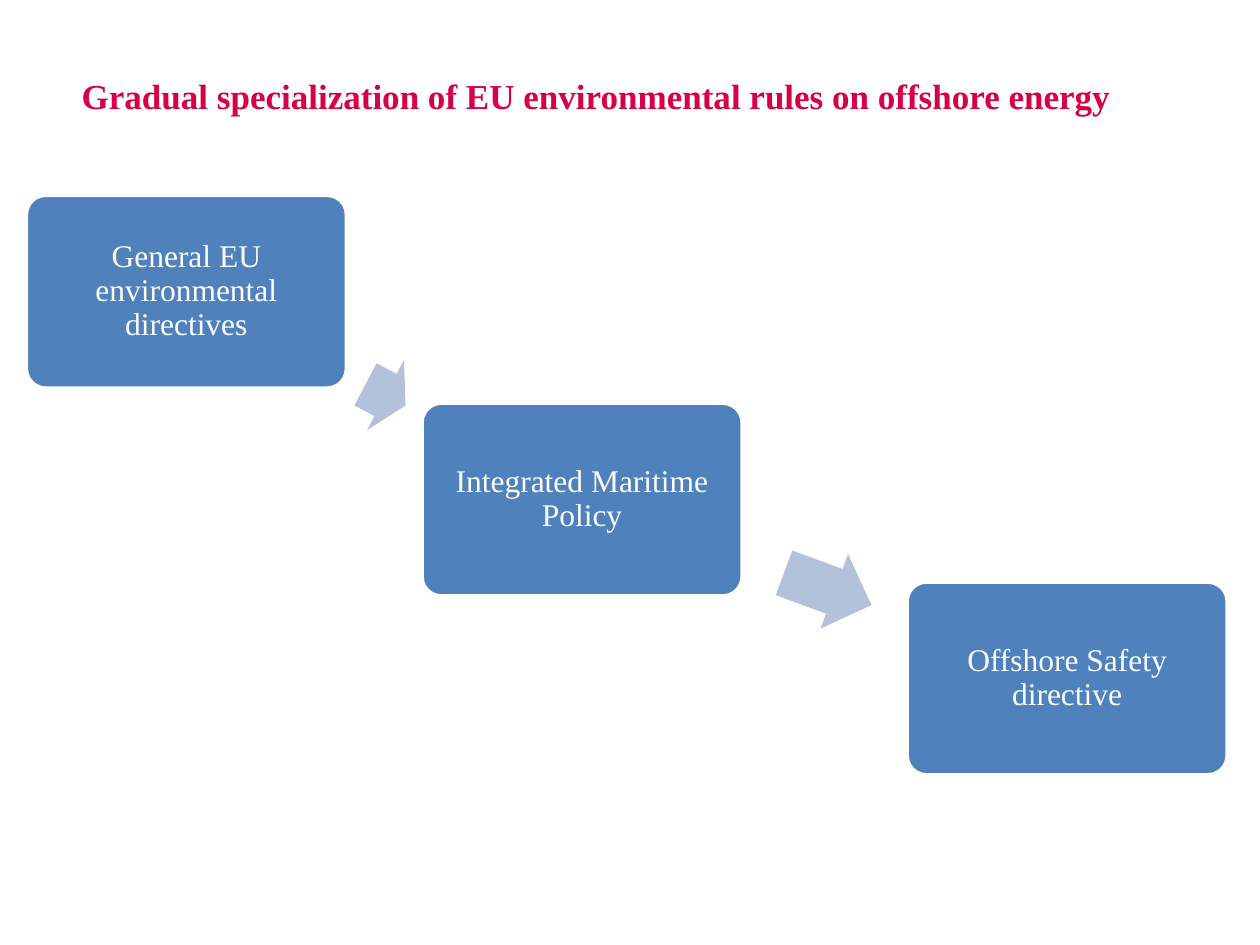
"""Build a slide of three descending steps from general to specialised EU rules."""
import pptx
import pptx.dml.color
import pptx.enum.shapes
import pptx.enum.text
import pptx.util

HEADING = "Gradual specialization of EU environmental rules on offshore energy"
STEPS = [
    {"label": "General EU environmental directives", "left": 0.021, "top": 0.2067},
    {"label": "Integrated Maritime Policy", "left": 0.335, "top": 0.4267},
    {"label": "Offshore Safety directive", "left": 0.72, "top": 0.616},
]
TRANSITIONS = [
    {"left": 0.288, "top": 0.376, "width": 0.036, "angle": 27.8},
    {"left": 0.62, "top": 0.5813, "width": 0.074, "angle": 20.2},
]
STEP_SIZE = (0.254, 0.204)
TRANSITION_HEIGHT = 0.084
HEADING_AREA = (0.055, 0.0173, 0.9, 0.1667)

THEME = {
    "font": "Times New Roman",
    "heading": "D70044",
    "step": "4F81BD",
    "transition": "B3C1DB",
    "light": "FFFFFF",
    "heading_size": 20,
    "step_size": 18,
    "outline": 2,
}

SHAPES = pptx.enum.shapes.MSO_SHAPE
ALIGN = pptx.enum.text.PP_ALIGN


def colour(key):
    return pptx.dml.color.RGBColor.from_string(THEME[key])


def area(left, top, width, height):
    return [
        int(share * side)
        for share, side in zip(
            (left, top, width, height),
            (deck.slide_width, deck.slide_height) * 2,
        )
    ]


def write(holder, text, *, size, color, align, bold=False, inset=(0.1, 0.05), spacing=1.0):
    frame = holder.text_frame
    frame.word_wrap = True
    frame.vertical_anchor = pptx.enum.text.MSO_ANCHOR.MIDDLE
    frame.margin_left = frame.margin_right = pptx.util.Inches(inset[0])
    frame.margin_top = frame.margin_bottom = pptx.util.Inches(inset[1])
    paragraph = frame.paragraphs[0]
    paragraph.alignment = align
    paragraph.line_spacing = spacing
    run = paragraph.add_run()
    run.text = text
    run.font.name = THEME["font"]
    run.font.size = pptx.util.Pt(THEME[size])
    run.font.bold = bold
    run.font.color.rgb = colour(color)


def draw(preset, place, fill, adjustments):
    figure = slide.shapes.add_shape(preset, *area(*place))
    figure.shadow.inherit = False
    figure.fill.solid()
    figure.fill.fore_color.rgb = colour(fill)
    for index, value in enumerate(adjustments):
        figure.adjustments[index] = value
    return figure


def add_step(step):
    box = draw(SHAPES.ROUNDED_RECTANGLE, (step["left"], step["top"], *STEP_SIZE), "step", [0.1])
    box.line.color.rgb = colour("light")
    box.line.width = pptx.util.Pt(THEME["outline"])
    write(box, step["label"], size="step_size", color="light", align=ALIGN.CENTER,
          inset=(0.07, 0.07), spacing=0.9)


def add_transition(transition):
    place = (transition["left"], transition["top"], transition["width"], TRANSITION_HEIGHT)
    arrow = draw(SHAPES.RIGHT_ARROW, place, "transition", [0.6, 0.5])
    arrow.line.fill.background()
    arrow.rotation = transition["angle"]


deck = pptx.Presentation()
deck.slide_width = pptx.util.Inches(10)
deck.slide_height = pptx.util.Inches(7.5)
slide = deck.slides.add_slide(deck.slide_layouts[6])

write(slide.shapes.add_textbox(*area(*HEADING_AREA)), HEADING,
      size="heading_size", color="heading", align=ALIGN.JUSTIFY, bold=True)
add_step(STEPS[0])
for transition, step in zip(TRANSITIONS, STEPS[1:]):
    add_transition(transition)
    add_step(step)

deck.save("out.pptx")
